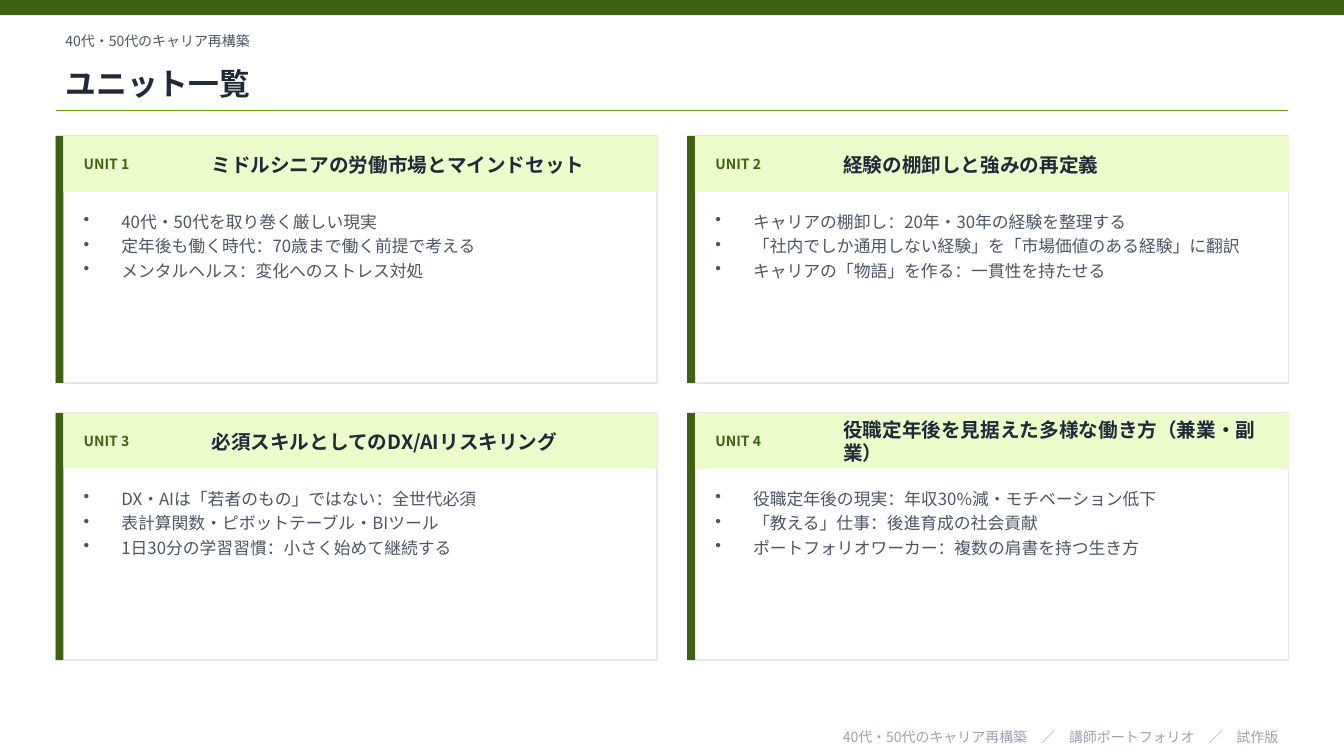
from lxml.etree import SubElement
from pptx import Presentation
from pptx.dml.color import RGBColor
from pptx.enum.shapes import MSO_CONNECTOR, MSO_SHAPE
from pptx.enum.text import MSO_ANCHOR, MSO_AUTO_SIZE, PP_ALIGN
from pptx.oxml.ns import qn
from pptx.util import Cm, Pt

FONT = "Noto Sans CJK JP"
DARK_GREEN = RGBColor(0x3F, 0x62, 0x12)
GREEN = RGBColor(0x65, 0xA3, 0x0D)
PALE_GREEN = RGBColor(0xEC, 0xFC, 0xCB)
WHITE = RGBColor(0xFF, 0xFF, 0xFF)
BORDER = RGBColor(0xE5, 0xE7, 0xEB)
INK = RGBColor(0x1F, 0x29, 0x37)
GRAY = RGBColor(0x4B, 0x55, 0x63)
LIGHT_GRAY = RGBColor(0x9C, 0xA3, 0xAF)

PAGE_WIDTH, PAGE_HEIGHT = 33.87, 19.05
MARGIN, CONTENT_WIDTH = 1.4, 31.06
CARD_TOP, CARD_WIDTH, CARD_HEIGHT, CARD_GAP = 3.43, 15.16, 6.22, 0.76
STRIPE_WIDTH, HEADER_HEIGHT = 0.2, 1.4

COURSE = "40代・50代のキャリア再構築"
UNITS = [
    ("ミドルシニアの労働市場とマインドセット", [
        "40代・50代を取り巻く厳しい現実",
        "定年後も働く時代：70歳まで働く前提で考える",
        "メンタルヘルス：変化へのストレス対処",
    ]),
    ("経験の棚卸しと強みの再定義", [
        "キャリアの棚卸し：20年・30年の経験を整理する",
        "「社内でしか通用しない経験」を「市場価値のある経験」に翻訳",
        "キャリアの「物語」を作る：一貫性を持たせる",
    ]),
    ("必須スキルとしてのDX/AIリスキリング", [
        "DX・AIは「若者のもの」ではない：全世代必須",
        "表計算関数・ピボットテーブル・BIツール",
        "1日30分の学習習慣：小さく始めて継続する",
    ]),
    ("役職定年後を見据えた多様な働き方（兼業・副業）", [
        "役職定年後の現実：年収30%減・モチベーション低下",
        "「教える」仕事：後進育成の社会貢献",
        "ポートフォリオワーカー：複数の肩書を持つ生き方",
    ]),
]


def style_paragraph(paragraph, size, color, bold=False):
    font = paragraph.font
    font.size = Pt(size)
    font.bold = bold
    font.color.rgb = color
    font.name = FONT
    # Japanese characters take the East Asian typeface
    defaults = paragraph._p.pPr.find(qn("a:defRPr"))
    SubElement(defaults, qn("a:ea"), typeface=FONT)


def add_bullet(paragraph):
    properties = paragraph._p.get_or_add_pPr()
    properties.set("marL", str(Cm(0.95)))
    properties.set("indent", str(-Cm(0.95)))
    paragraph.space_after = Pt(3)
    SubElement(properties, qn("a:buChar"), char="•")


def place(shape, left, top, width, height):
    shape.left, shape.top = Cm(left), Cm(top)
    shape.width, shape.height = Cm(width), Cm(height)


def fill_text(box, text, size, color, bold=False, align=PP_ALIGN.LEFT):
    frame = box.text_frame
    frame.word_wrap = True
    frame.auto_size = MSO_AUTO_SIZE.NONE
    frame.vertical_anchor = MSO_ANCHOR.MIDDLE
    frame.text = text
    paragraph = frame.paragraphs[0]
    paragraph.alignment = align
    style_paragraph(paragraph, size, color, bold)


def add_label(page, left, top, width, height, text, size, color, **style):
    box = page.shapes.add_textbox(Cm(left), Cm(top), Cm(width), Cm(height))
    fill_text(box, text, size, color, **style)


def add_bullets(page, left, top, width, height, items):
    box = page.shapes.add_textbox(Cm(left), Cm(top), Cm(width), Cm(height))
    frame = box.text_frame
    frame.word_wrap = True
    frame.text = "\n".join(items)
    for paragraph in frame.paragraphs:
        add_bullet(paragraph)
        style_paragraph(paragraph, 12, GRAY)


def add_block(page, left, top, width, height, fill, line=None):
    block = page.shapes.add_shape(
        MSO_SHAPE.RECTANGLE, Cm(left), Cm(top), Cm(width), Cm(height))
    block.shadow.inherit = False
    block.fill.solid()
    block.fill.fore_color.rgb = fill
    if line is None:
        block.line.fill.background()
    else:
        block.line.color.rgb = line
        block.line.width = Pt(1)


def add_rule(page, left, top, width):
    rule = page.shapes.add_connector(
        MSO_CONNECTOR.STRAIGHT, Cm(left), Cm(top), Cm(left + width), Cm(top))
    rule.line.color.rgb = GREEN
    rule.line.width = Pt(1)
    SubElement(rule._element.spPr, qn("a:effectLst"))


def add_unit_card(page, left, top, number, title, items):
    add_block(page, left, top, CARD_WIDTH, CARD_HEIGHT, WHITE, BORDER)
    add_block(page, left, top, STRIPE_WIDTH, CARD_HEIGHT, DARK_GREEN)
    add_block(page, left + STRIPE_WIDTH, top, CARD_WIDTH - STRIPE_WIDTH,
              HEADER_HEIGHT, PALE_GREEN)
    add_label(page, left + 0.46, top + 0.2, 3.05, 1.02,
              f"UNIT {number}", 10, DARK_GREEN, bold=True)
    add_label(page, left + 3.68, top + 0.2, 11.1, 1.02,
              title, 14, INK, bold=True)
    add_bullets(page, left + 0.46, top + 1.78, 14.25, 4.06, items)


def main():
    deck = Presentation()
    deck.slide_width, deck.slide_height = Cm(PAGE_WIDTH), Cm(PAGE_HEIGHT)
    page = deck.slides.add_slide(deck.slide_layouts[5])

    add_block(page, 0, 0, PAGE_WIDTH, 0.38, DARK_GREEN)
    add_label(page, MARGIN, 0.64, CONTENT_WIDTH, 0.76, COURSE, 10, GRAY)
    title = page.shapes.title
    place(title, MARGIN, 1.4, CONTENT_WIDTH, 1.4)
    fill_text(title, "ユニット一覧", 22, INK, bold=True)
    add_rule(page, MARGIN, 2.79, CONTENT_WIDTH)

    for index, (unit_title, items) in enumerate(UNITS):
        row, column = divmod(index, 2)
        left = MARGIN + column * (CARD_WIDTH + CARD_GAP)
        top = CARD_TOP + row * (CARD_HEIGHT + CARD_GAP)
        add_unit_card(page, left, top, index + 1, unit_title, items)

    add_label(page, MARGIN, 18.29, CONTENT_WIDTH, 0.56,
              f"{COURSE}　／　講師ポートフォリオ　／　試作版",
              10, LIGHT_GRAY, align=PP_ALIGN.RIGHT)
    deck.save("out.pptx")


if __name__ == "__main__":
    main()
